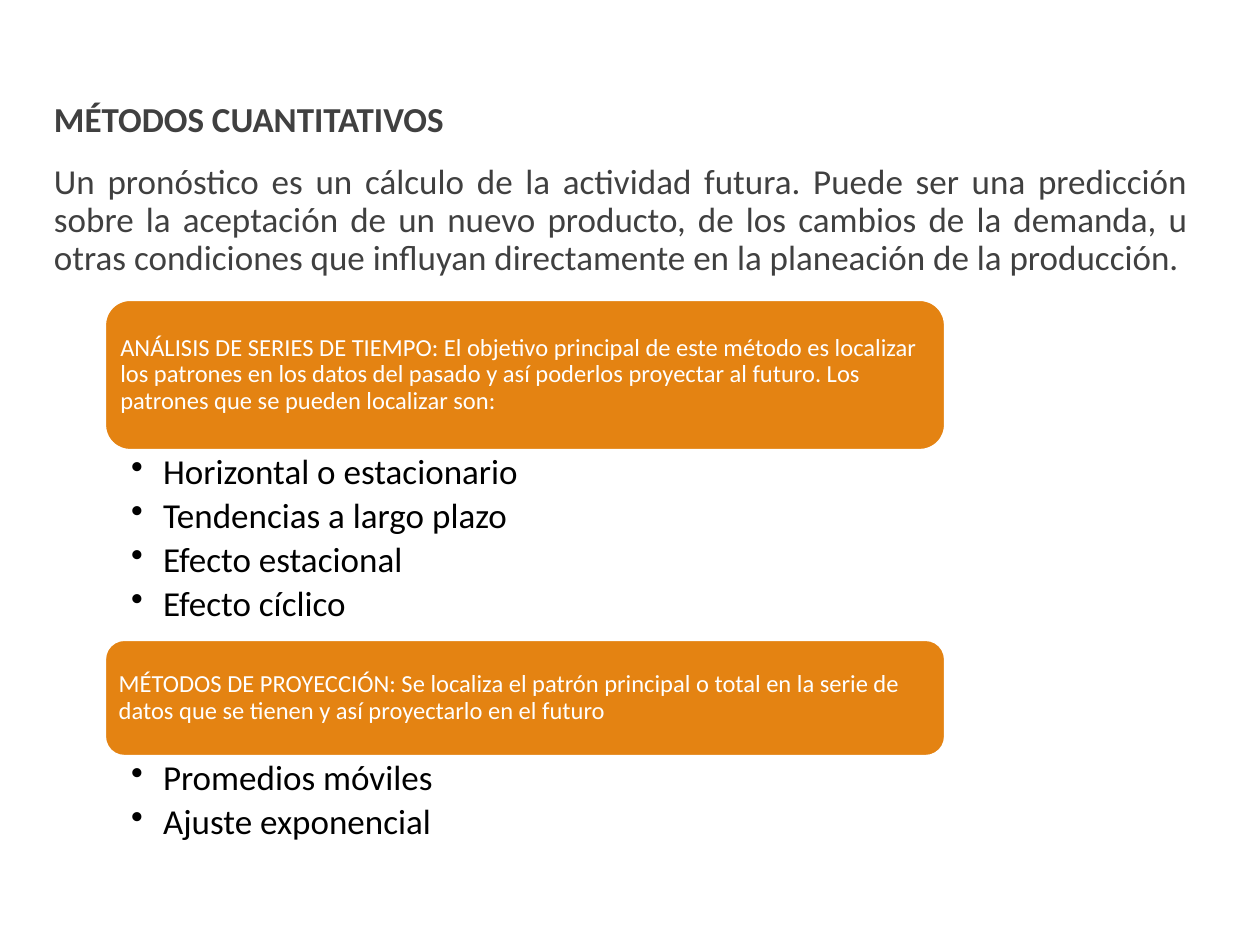
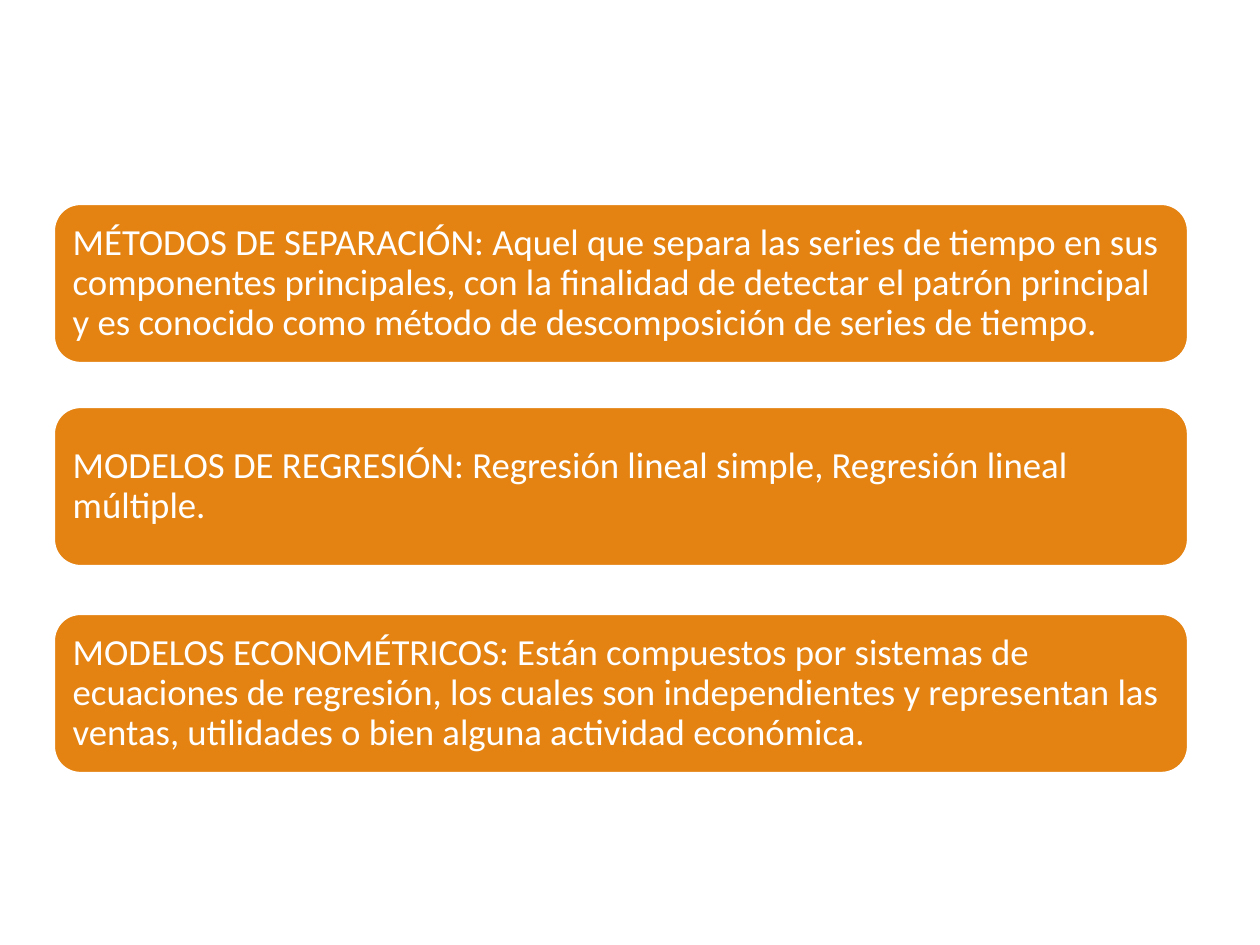
import dataclasses

import lxml.etree
import pptx
import pptx.dml.color
import pptx.enum.shapes
import pptx.enum.text
import pptx.oxml.ns
import pptx.util

PX = 914400 / 126
ALIGN = pptx.enum.text.PP_ALIGN
ANCHOR = pptx.enum.text.MSO_ANCHOR


@dataclasses.dataclass(frozen=True)
class Theme:
    font: str = "Calibri"
    card: str = "E48312"
    white: str = "FFFFFF"
    heading: str = "404040"
    bullet: str = "000000"
    body_size: int = 20
    small_card_size: int = 14
    large_card_size: int = 21
    border: float = 1.25
    line_spacing: float = 0.9


THEME = Theme()


def px(n):
    return pptx.util.Emu(round(n * PX))


def rgb(value):
    return pptx.dml.color.RGBColor.from_string(value)


def setup_frame(tf, insets, anchor=ANCHOR.TOP):
    """Insets are left, top, right, bottom in px."""
    tf.word_wrap = True
    tf.vertical_anchor = anchor
    tf.margin_left, tf.margin_top, tf.margin_right, tf.margin_bottom = map(px, insets)


def format_paragraph(p, size, color, bold=False, align=ALIGN.LEFT, after=0):
    p.alignment = align
    p.line_spacing = THEME.line_spacing
    p.space_after = pptx.util.Pt(after)
    for r in p.runs:
        r.font.name = THEME.font
        r.font.size = pptx.util.Pt(size)
        r.font.bold = bold
        r.font.color.rgb = rgb(color)


def add_bullet(p, indent):
    pPr = p._p.get_or_add_pPr()
    pPr.set("marL", str(px(indent)))
    pPr.set("indent", str(-px(indent)))
    bullet = lxml.etree.SubElement(pPr, pptx.oxml.ns.qn("a:buChar"))
    bullet.set("char", "•")


def add_intro(slide, box, title, text):
    tf = slide.shapes.add_textbox(*map(px, box)).text_frame
    setup_frame(tf, (0, 6, 0, 6))
    tf.text = title
    format_paragraph(tf.paragraphs[0], THEME.body_size, THEME.heading, bold=True, after=2)
    p = tf.add_paragraph()
    p.text = text
    p.space_before = pptx.util.Pt(12)
    format_paragraph(p, THEME.body_size, THEME.heading, align=ALIGN.JUSTIFY, after=2)


def add_card(slide, box, text, size, inset):
    kind = pptx.enum.shapes.MSO_SHAPE.ROUNDED_RECTANGLE
    sp = slide.shapes.add_shape(kind, *map(px, box))
    sp.shadow.inherit = False
    sp.fill.solid()
    sp.fill.fore_color.rgb = rgb(THEME.card)
    sp.line.color.rgb = rgb(THEME.white)
    sp.line.width = pptx.util.Pt(THEME.border)
    tf = sp.text_frame
    setup_frame(tf, (inset,) * 4, ANCHOR.MIDDLE)
    tf.text = text
    format_paragraph(tf.paragraphs[0], size, THEME.white)


def add_bullet_list(slide, box, items):
    tf = slide.shapes.add_textbox(*map(px, box)).text_frame
    setup_frame(tf, (26, 4, 20, 4))
    tf.text = "\n".join(items)
    for p in tf.paragraphs:
        p.level = 1
        add_bullet(p, 32)
        format_paragraph(p, THEME.body_size, THEME.bullet, after=3.6)


def build_quantitative_methods(slide):
    add_intro(
        slide, (54, 96, 1134, 198), "MÉTODOS CUANTITATIVOS",
        "Un pronóstico es un cálculo de la actividad futura. Puede ser una predicción "
        "sobre la aceptación de un nuevo producto, de los cambios de la demanda, u otras "
        "condiciones que influyan directamente en la planeación de la producción.")
    sections = [
        ("ANÁLISIS DE SERIES DE TIEMPO: El objetivo principal de este método es localizar "
         "los patrones en los datos del pasado y así poderlos proyectar al futuro. Los "
         "patrones que se pueden localizar son:", 150,
         ["Horizontal o estacionario", "Tendencias a largo plazo",
          "Efecto estacional", "Efecto cíclico"], 190),
        ("MÉTODOS DE PROYECCIÓN: Se localiza el patrón principal o total en la serie de "
         "datos que se tienen y así proyectarlo en el futuro", 116,
         ["Promedios móviles", "Ajuste exponencial"], 102),
    ]
    left, top, width = 105, 300, 840
    for text, card_height, items, list_height in sections:
        add_card(slide, (left, top, width, card_height), text, THEME.small_card_size, 8)
        top += card_height
        add_bullet_list(slide, (left, top, width, list_height), items)
        top += list_height


def build_other_methods(slide):
    cards = [
        (204, "MÉTODOS DE SEPARACIÓN: Aquel que separa las series de tiempo en sus "
              "componentes principales, con la finalidad de detectar el patrón principal y "
              "es conocido como método de descomposición de series de tiempo."),
        (407, "MODELOS DE REGRESIÓN: Regresión lineal simple, Regresión lineal múltiple."),
        (614, "MODELOS ECONOMÉTRICOS: Están compuestos por sistemas de ecuaciones de "
              "regresión, los cuales son independientes y representan las ventas, "
              "utilidades o bien alguna actividad económica."),
    ]
    for top, text in cards:
        add_card(slide, (54, top, 1134, 159), text, THEME.large_card_size, 11)


def main():
    prs = pptx.Presentation()
    prs.slide_width, prs.slide_height = px(1260), px(945)
    for build in (build_quantitative_methods, build_other_methods):
        build(prs.slides.add_slide(prs.slide_layouts[6]))
    prs.save("out.pptx")


if __name__ == "__main__":
    main()
